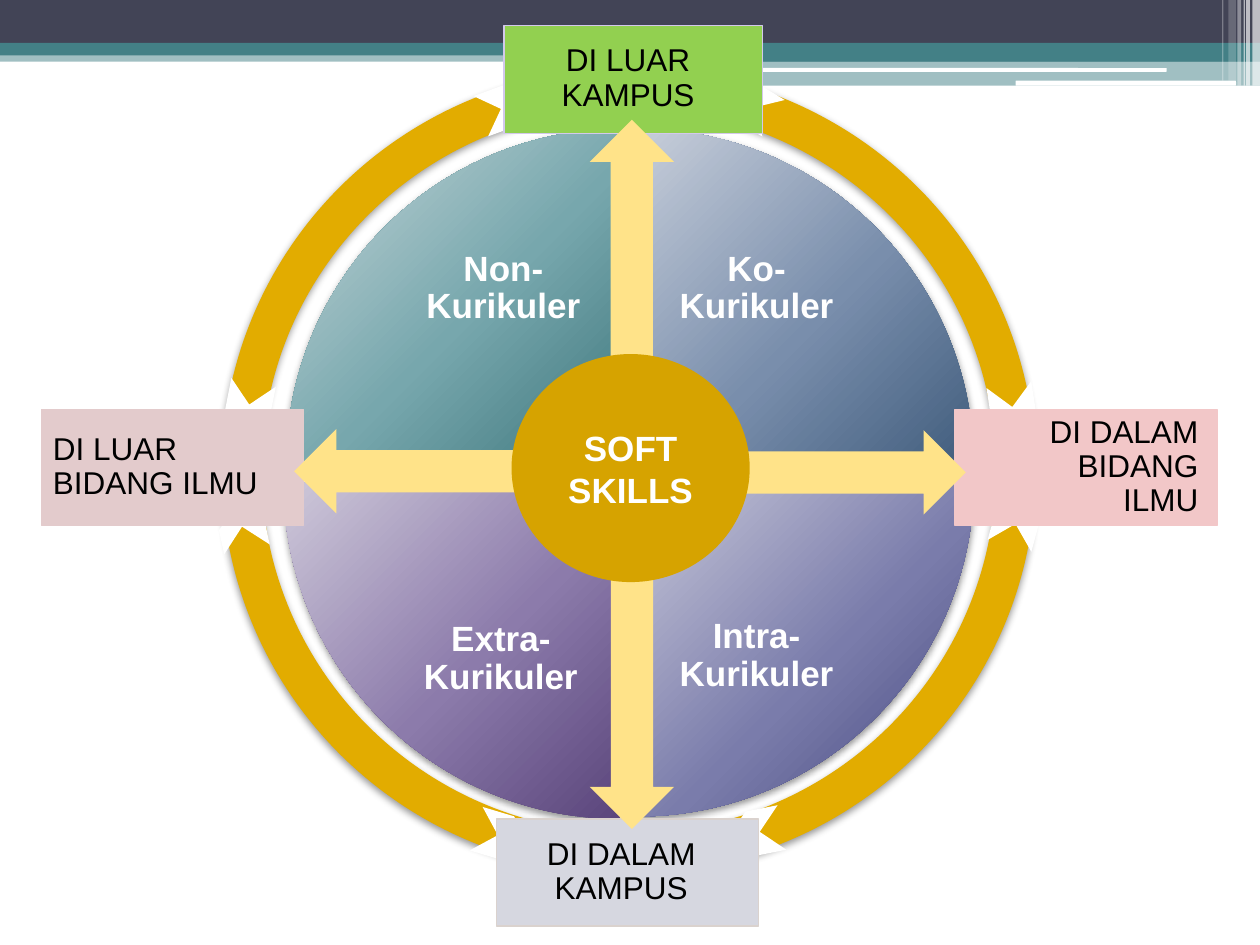
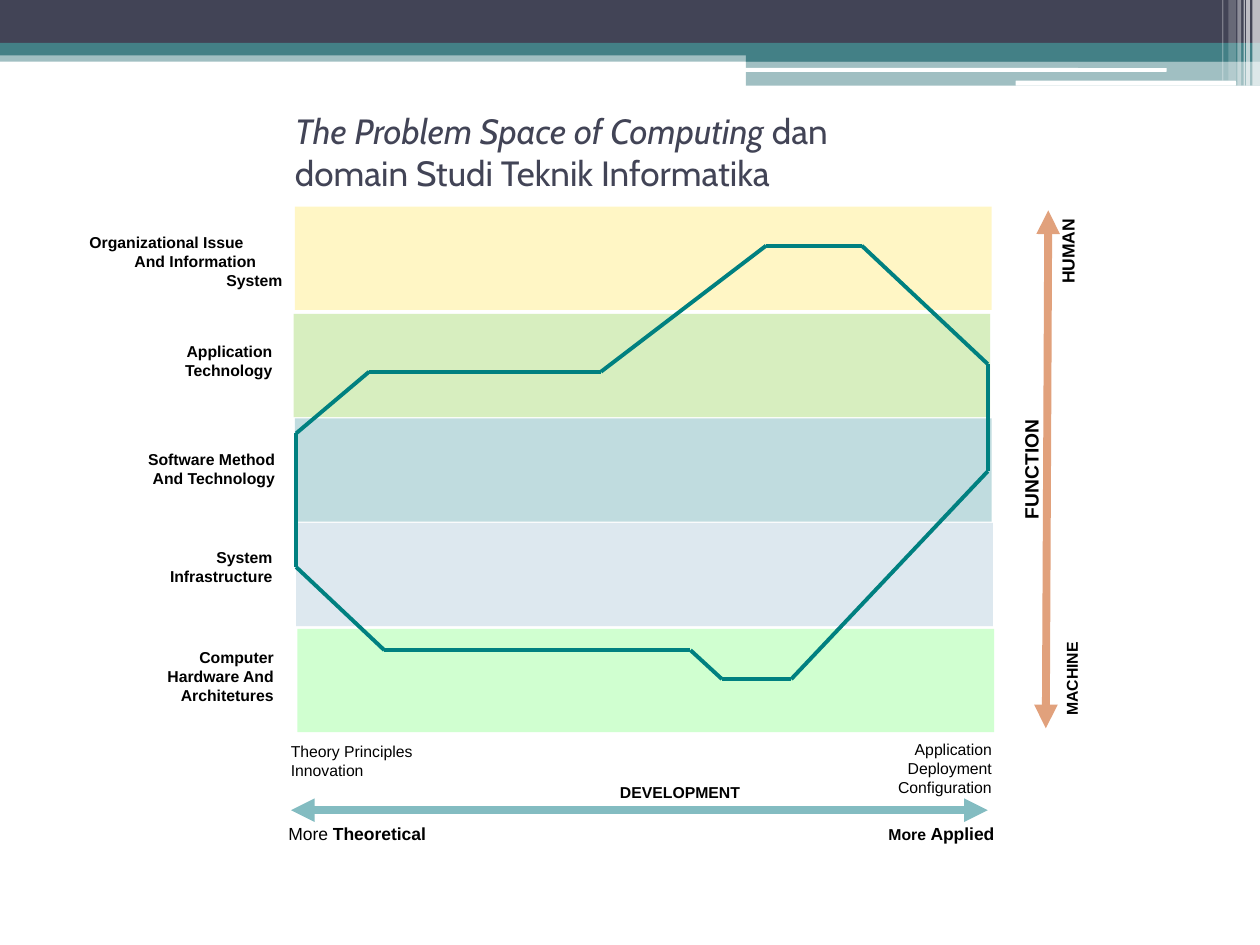
import itertools

import lxml.etree
import pptx
import pptx.dml.color
import pptx.enum.shapes
import pptx.enum.text
import pptx.oxml
import pptx.oxml.ns
import pptx.util

RGBColor = pptx.dml.color.RGBColor
Shape = pptx.enum.shapes.MSO_SHAPE
Align = pptx.enum.text.PP_ALIGN
Anchor = pptx.enum.text.MSO_ANCHOR
qn = pptx.oxml.ns.qn

WHITE = RGBColor(0xFF, 0xFF, 0xFF)
BLACK = RGBColor(0, 0, 0)
SLATE = RGBColor(0x42, 0x44, 0x56)
TEAL = RGBColor(0x43, 0x80, 0x86)
GOLD = RGBColor(0xE2, 0xAC, 0x00)
DARK_GOLD = RGBColor(0xD6, 0xA3, 0x00)
PALE_GOLD = RGBColor(0xFF, 0xE3, 0x89)
GREEN = RGBColor(0x92, 0xD0, 0x50)
GREY = RGBColor(0xD6, 0xD7, 0xE0)
MAUVE = RGBColor(0xE3, 0xCB, 0xCC)
PINK = RGBColor(0xF2, 0xC7, 0xC8)
LILAC = RGBColor(0xD3, 0xC9, 0xEB)
SAND = RGBColor(0xDA, 0xD2, 0xCE)
OUTLINE = RGBColor(0x00, 0x80, 0x80)
AQUA = RGBColor(0x83, 0xBC, 0xC1)
COPPER = RGBColor(0xE1, 0xA1, 0x7C)
BAND_YELLOW = RGBColor(0xFF, 0xEF, 0x8F)
BAND_GREEN = RGBColor(0xCC, 0xE9, 0xAD)
BAND_TEAL = RGBColor(0xAD, 0xD2, 0xD6)
BAND_BLUE = RGBColor(0xBE, 0xD3, 0xE1)
BAND_MINT = RGBColor(0xC5, 0xFF, 0xC5)

DRAWING = 'xmlns:a="http://schemas.openxmlformats.org/drawingml/2006/main"'
SHADOW = (
    f'<a:effectLst {DRAWING}><a:outerShdw blurRad="51000" dist="25400" dir="5400000" rotWithShape="0">'
    '<a:srgbClr val="000000"><a:alpha val="42000"/></a:srgbClr></a:outerShdw></a:effectLst>'
)

presentation = pptx.Presentation()
presentation.slide_width = pptx.util.Inches(10)
presentation.slide_height = pptx.util.Inches(7.5)
CELL = presentation.slide_width / 100


def add_shape(slide, kind, box, color=None, opacity=100, rotation=0, line=None):
    place = [round(cells * CELL) for cells in box]
    if kind is None:
        return slide.shapes.add_textbox(*place)
    shape = slide.shapes.add_shape(kind, *place)
    shape.shadow.inherit = False
    shape.rotation = rotation
    if color is not None:
        shape.fill.solid()
        shape.fill.fore_color.rgb = color
        if opacity < 100:
            value = shape.element.spPr.find(qn("a:solidFill"))[0]
            lxml.etree.SubElement(value, qn("a:alpha")).set("val", str(opacity * 1000))
    if line is None:
        shape.line.fill.background()
    else:
        shape.line.color.rgb = line
        shape.line.width = pptx.util.Pt(0.75)
    return shape


def write_text(shape, text, size, align=Align.LEFT, bold=False, color=BLACK,
               anchor=Anchor.TOP, insets=(1, 0.5, 1, 0.5), spacing=None):
    frame = shape.text_frame
    frame.word_wrap = True
    frame.vertical_anchor = anchor
    (frame.margin_left, frame.margin_top,
     frame.margin_right, frame.margin_bottom) = [round(inset * CELL) for inset in insets]
    frame.text = text
    for paragraph in frame.paragraphs:
        paragraph.alignment = align
        paragraph.line_spacing = spacing
        for run in paragraph.runs:
            run.font.name = "Arial"
            run.font.size = pptx.util.Pt(size)
            run.font.bold = bold
            run.font.color.rgb = color
    return frame


cycle_slide = presentation.slides.add_slide(presentation.slide_layouts[6])
space_slide = presentation.slides.add_slide(presentation.slide_layouts[5])

header_bands = [
    (Shape.RECTANGLE, (0, 4, 100, 0.9), TEAL, 50),
    (Shape.RECTANGLE, (0, 0, 100, 3.4), SLATE, 100),
    (Shape.RECTANGLE, (0, 3.4, 100, 1), TEAL, 100),
    (Shape.RECTANGLE, (59.2, 3.9, 40.8, 1), TEAL, 100),
    (Shape.RECTANGLE, (59.2, 4.8, 40.8, 2), TEAL, 50),
    (Shape.ROUNDED_RECTANGLE, (59.1, 5.4, 33.5, 0.3), WHITE, 100),
    (Shape.ROUNDED_RECTANGLE, (80.6, 6.4, 17.5, 0.4), WHITE, 100),
    (Shape.RECTANGLE, (99.4, 0, 0.6, 6.8), WHITE, 65),
    (Shape.RECTANGLE, (98.9, 0, 0.3, 6.8), WHITE, 65),
    (Shape.RECTANGLE, (98.7, 0, 0.1, 6.8), WHITE, 60),
    (Shape.RECTANGLE, (98.2, 0, 0.3, 6.8), WHITE, 40),
    (Shape.RECTANGLE, (97.5, 0, 0.6, 6.4), WHITE, 20),
    (Shape.RECTANGLE, (97, 0, 0.1, 6.4), WHITE, 30),
]
master_tree = presentation.slide_master.shapes.element
for position, (kind, box, color, opacity) in enumerate(header_bands, start=2):
    band = add_shape(cycle_slide, kind, box, color, opacity)
    master_tree.insert(position, band.element)

ring = add_shape(cycle_slide, Shape.CIRCULAR_ARROW, (15.2, 3, 69.4, 68.7), GOLD)
for index, value in enumerate((0.046, 3.307, 104.605, 111.016, 0.058)):
    ring.adjustments[index] = value
shadowed = [ring]

wedges = [
    ((22.5, 38.3), 270, ("CEC8D9", "8C7BAB", "5B467C"), "Extra-Kurikuler", (30.3, 38.3), Anchor.BOTTOM, 1.9),
    ((22.7, 10.2), 0, ("C7D7DA", "77A7AD", "3E777D"), "Non-\nKurikuler", (30.5, 18), Anchor.TOP, 0),
    ((50.6, 10.2), 90, ("C7CEDA", "798EAC", "415D7D"), "Ko-\nKurikuler", (50.6, 18), Anchor.TOP, 1.9),
    ((50.6, 38.1), 180, ("C8C8D9", "7A7CAB", "44467C"), "Intra-Kurikuler", (50.6, 38.1), Anchor.BOTTOM, 1.9),
]
for corner, rotation, tones, label, label_corner, anchor, side in wedges:
    wedge = add_shape(cycle_slide, Shape.PIE_WEDGE, (*corner, 26.7, 26.7), WHITE, rotation=rotation)
    stops = "".join(
        f'<a:gs pos="{stop * 1000}"><a:srgbClr val="{tone}"/></a:gs>'
        for stop, tone in zip((0, 55, 100), tones)
    )
    gradient = pptx.oxml.parse_xml(
        f'<a:gradFill {DRAWING} rotWithShape="0"><a:gsLst>{stops}</a:gsLst><a:path path="circle">'
        '<a:fillToRect l="-40000" t="-90000" r="140000" b="190000"/></a:path></a:gradFill>'
    )
    properties = wedge.element.spPr
    properties.replace(properties.find(qn("a:solidFill")), gradient)
    shadowed.append(wedge)
    caption = add_shape(cycle_slide, None, (*label_corner, 18.9, 18.9))
    write_text(caption, label, 20, Align.CENTER, True, WHITE, anchor, (side, 1.9, side, 1.9), 0.9)

for shape in shadowed:
    properties = shape.element.spPr
    properties.replace(properties.find(qn("a:effectLst")), pptx.oxml.parse_xml(SHADOW))

chevrons = [
    ((17.3, 39.9, 3.8, 3.7), 257.7),
    ((78.5, 39.4, 4.4, 3.6), 285.2),
    ((38, 6.6, 5.4, 3.4), 340),
    ((57.5, 6.6, 4.2, 3.4), 211.2),
    ((57.7, 64.3, 4.4, 3.6), 168.8),
    ((37.7, 64.6, 4.4, 3.6), 16.6),
    ((78.2, 30.9, 4.4, 3.6), 81.3),
    ((17.5, 30.7, 4.4, 3.6), 101.2),
]
for box, rotation in chevrons:
    add_shape(cycle_slide, Shape.CHEVRON, box, WHITE, rotation=rotation)

axis_ends = [
    ((40, 2, 20.5, 8.6), GREEN, LILAC, "DI LUAR KAMPUS", (40.8, 2.5, 19.7, 7.5), Align.CENTER,
     (46.8, 9.5, 6.7, 20.8), 0),
    ((39.4, 65, 20.8, 8.5), GREY, SAND, "DI DALAM KAMPUS", (40, 65, 20.2, 8.5), Align.CENTER,
     (46.8, 45, 6.7, 20.8), 180),
    ((3.3, 32.5, 20.8, 9.2), MAUVE, MAUVE, "DI LUAR BIDANG ILMU", (4.2, 32.5, 20, 9.2), Align.LEFT,
     (29.5, 27.9, 6.7, 19), 270),
    ((75.8, 32.5, 20.8, 9.2), PINK, PINK, "DI DALAM BIDANG ILMU", (79.2, 32.5, 17.5, 9.2), Align.RIGHT,
     (63.7, 27.9, 6.7, 19.2), 90),
]
for box, color, border, label, label_box, align, arrow_box, rotation in axis_ends:
    add_shape(cycle_slide, Shape.RECTANGLE, box, color, line=border)
    write_text(add_shape(cycle_slide, None, label_box), label, 18, align,
               anchor=Anchor.MIDDLE, insets=(0, 1.6, 1.6, 1.6), spacing=0.9)
    add_shape(cycle_slide, Shape.UP_ARROW, arrow_box, PALE_GOLD, rotation=rotation)

hub = add_shape(cycle_slide, Shape.OVAL, (40.6, 28.1, 18.9, 18.1), DARK_GOLD)
write_text(hub, "SOFT SKILLS", 20, Align.CENTER, True, WHITE, Anchor.MIDDLE)

title = space_slide.shapes.title
title.left, title.top, title.width, title.height = [round(cells * CELL) for cells in (22.4, 6.2, 61.7, 11.7)]
title.text_frame.vertical_anchor = Anchor.MIDDLE
title.text_frame.word_wrap = True
heading = title.text_frame.paragraphs[0]
heading.alignment = Align.LEFT
heading.add_run().text = "The Problem Space of Computing "
heading.add_run().text = "dan "
heading.add_line_break()
heading.add_run().text = "domain Studi Teknik Informatika"
for index, run in enumerate(heading.runs):
    run.font.name = "Cabin"
    run.font.size = pptx.util.Pt(20)
    run.font.color.rgb = SLATE
    run.font.italic = index == 0

layers = [
    ((23.4, 16.4), BAND_YELLOW, 51),
    ((23.5, 41.5), BAND_BLUE, 52),
    ((23.3, 24.9), BAND_GREEN, 77),
    ((23.4, 33.2), BAND_TEAL, 76),
    ((23.6, 49.9), BAND_MINT, 80),
]
for corner, color, opacity in layers:
    add_shape(space_slide, Shape.RECTANGLE, (*corner, 55.3, 8.2), color, opacity)

for left, top, label, align in [
    (22.1, 58.4, "Theory Principles Innovation", Align.LEFT),
    (67.6, 58.2, "Application Deployment Configuration", Align.RIGHT),
]:
    note = add_shape(space_slide, Shape.RECTANGLE, (left, top, 12.1, 8.2), WHITE)
    write_text(note, label, 9, align)

labels = [
    ((39.2, 61.6, 20.5, 5.3), "DEVELOPMENT", 9, Align.RIGHT),
    ((11.3, 26.6, 11.3, 4.7), "Application Technology", 9, Align.RIGHT),
    ((10.2, 35.2, 12.6, 4.9), "Software Method And Technology", 9, Align.RIGHT),
    ((9.8, 43, 12.8, 5.5), "System Infrastructure", 9, Align.RIGHT),
    ((11.3, 50.9, 11.4, 6.2), "Computer Hardware And Architetures", 9, Align.RIGHT),
]
for box, label, size, align in labels:
    write_text(add_shape(space_slide, None, box), label, size, align, True)

organization = write_text(add_shape(space_slide, None, (7, 18, 16.4, 5.5)),
                          "Organizational Issue\nAnd Information\nSystem", 9, Align.RIGHT, True,
                          insets=(0, 0.5, 1, 0.5))
for paragraph, indent in zip(organization.paragraphs, (3.1, 2.1, 0)):
    paragraph._p.get_or_add_pPr().set("marR", str(round(indent * CELL)))

for box, label, size, align, side in [
    ((80.7, 31.2, 3.5, 11), "FUNCTION", 11, Align.LEFT, 0.2),
    ((83.4, 16.4, 3.3, 10.9), "HUMAN", 10, Align.RIGHT, 1),
    ((83.8, 49.2, 3.8, 8.6), "MACHINE", 9, Align.LEFT, 1),
]:
    frame = write_text(add_shape(space_slide, None, box), label, size, align, True,
                       insets=(side, 0.5, side, 0.5))
    frame._txBody.bodyPr.set("vert", "vert270")

for left, word, sizes, more_bold, align in [
    (21.9, "Theoretical", (10, 10), False, Align.LEFT),
    (59.4, "Applied", (9, 10), True, Align.RIGHT),
]:
    frame = write_text(add_shape(space_slide, None, (left, 64.8, 20.5, 3.3)), "More ", sizes[0], align, more_bold)
    run = frame.paragraphs[0].add_run()
    run.text = word
    run.font.name = "Arial"
    run.font.size = pptx.util.Pt(sizes[1])
    run.font.bold = True
    run.font.color.rgb = BLACK

domain_corners = [
    (23.5, 34.4), (29.3, 29.5), (47.7, 29.5), (60.8, 19.5), (68.4, 19.5), (78.4, 28.9),
    (78.4, 37.4), (62.8, 53.9), (57.3, 53.9), (54.8, 51.6), (30.5, 51.6), (23.5, 45),
]
lines = [
    ((23.1, 64.3), (78.4, 64.3), AQUA, 4.5, True),
    ((83.2, 16.7), (83, 57.8), COPPER, 4.5, True),
]
for start, end in itertools.pairwise(domain_corners + domain_corners[:1]):
    lines.append((start, end, OUTLINE, 2.25, False))
for start, end, color, width, has_arrows in lines:
    connector = space_slide.shapes.add_connector(
        pptx.enum.shapes.MSO_CONNECTOR.STRAIGHT, *[round(cells * CELL) for cells in (*start, *end)])
    connector.line.color.rgb = color
    connector.line.width = pptx.util.Pt(width)
    properties = connector.element.spPr
    if has_arrows:
        for tag in ("a:headEnd", "a:tailEnd"):
            lxml.etree.SubElement(properties.find(qn("a:ln")), qn(tag)).set("type", "triangle")
    lxml.etree.SubElement(properties, qn("a:effectLst"))

presentation.save("out.pptx")
